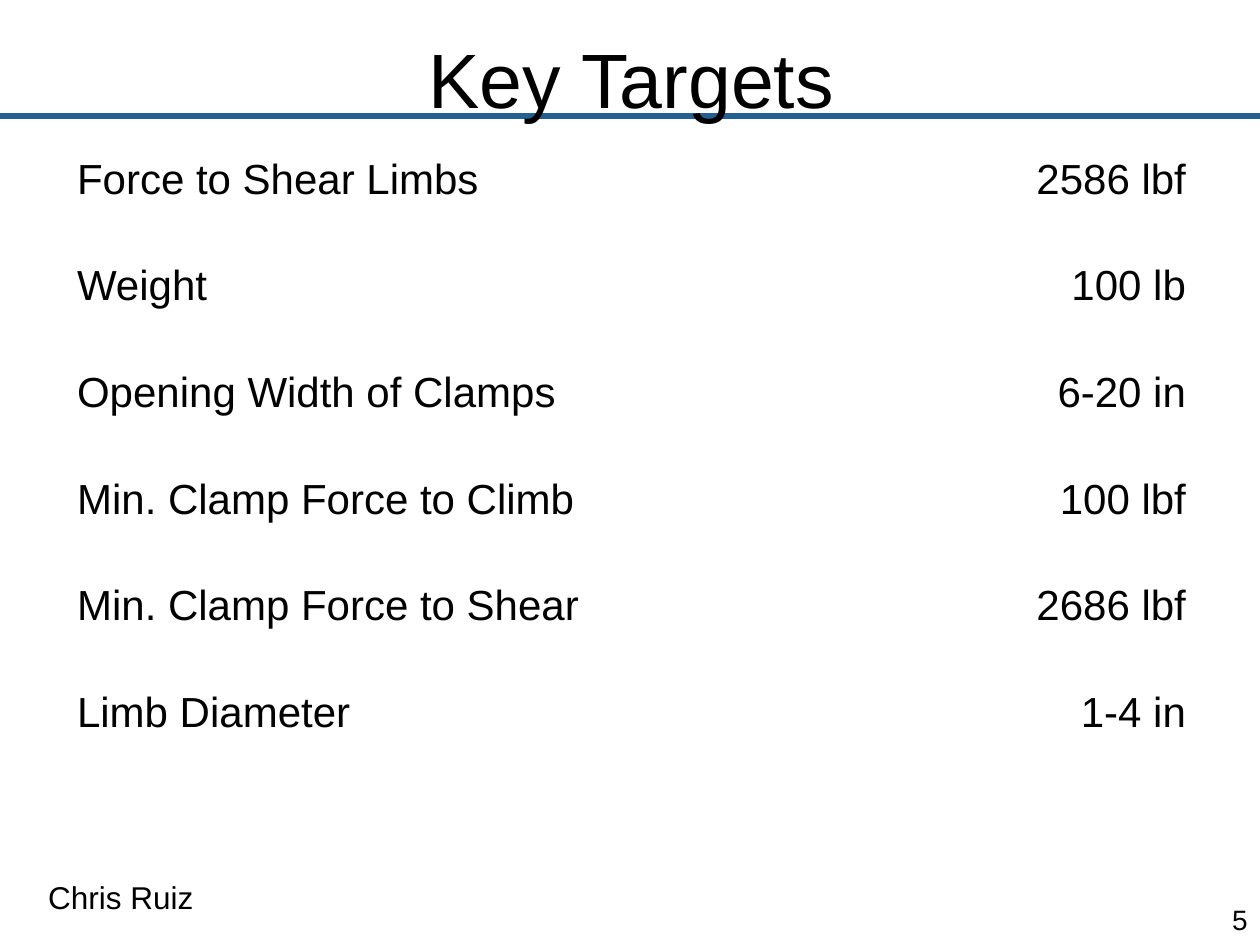
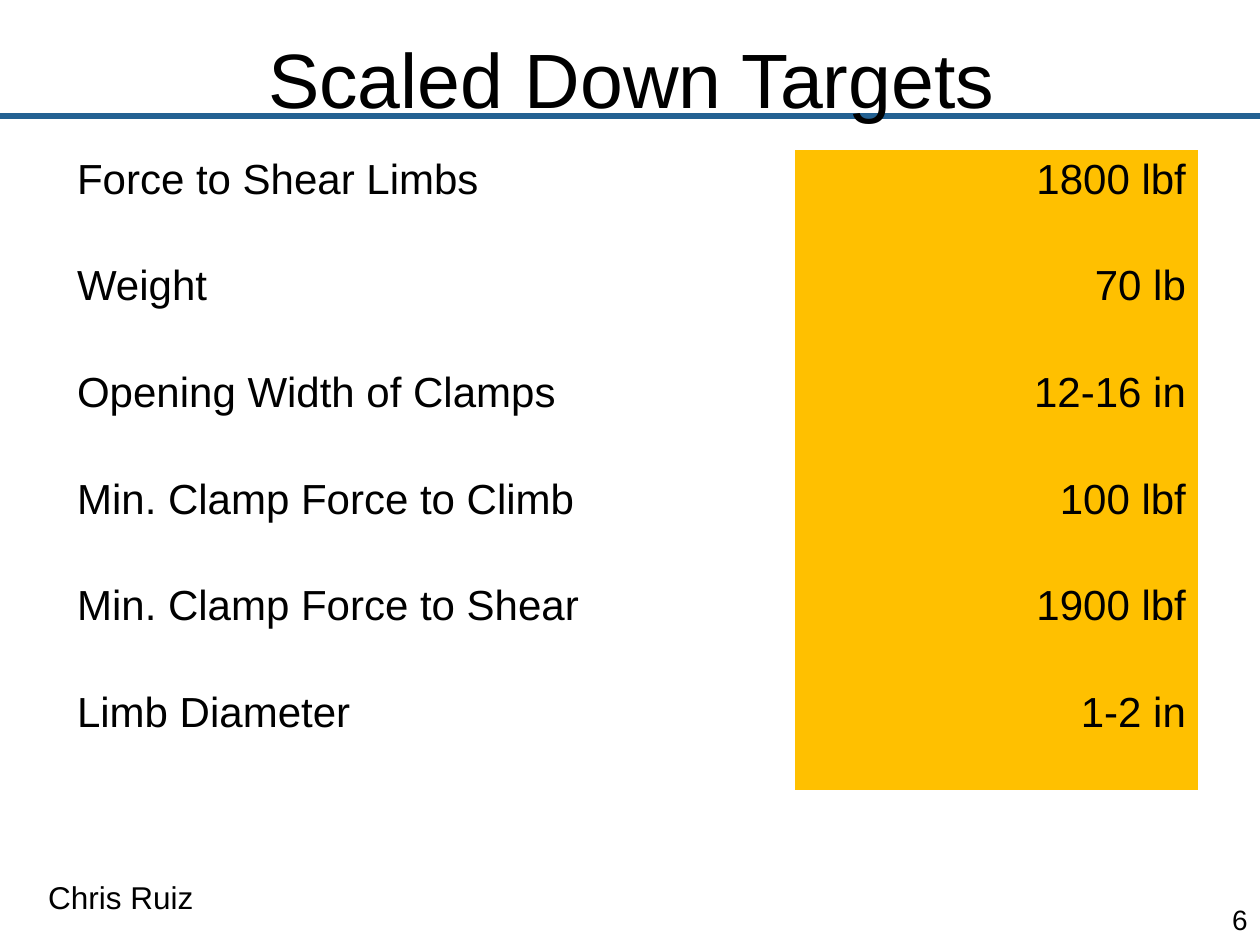
from lxml import etree
from pptx import Presentation
from pptx import util as u
from pptx.dml.color import RGBColor
from pptx.enum import shapes, text
from pptx.oxml.ns import qn

BLACK = RGBColor(0x00, 0x00, 0x00)
RULE_BLUE = RGBColor(0x23, 0x61, 0x92)
AMBER = RGBColor(0xFF, 0xC0, 0x00)
FONT = "Arial"
NO_GRID_STYLE = "{2D5ABB26-0587-4C30-8999-92F81FD0307C}"
FIRST_NUMBER = 5
ROW_HEIGHT = u.Cm(2.15)
LABEL_WIDTH = u.Cm(14.73)
VALUE_WIDTH = u.Cm(8.13)

LEFT = text.PP_ALIGN.LEFT
CENTER = text.PP_ALIGN.CENTER
RIGHT = text.PP_ALIGN.RIGHT

measures = [
    "Force to Shear Limbs",
    "Weight",
    "Opening Width of Clamps",
    "Min. Clamp Force to Climb",
    "Min. Clamp Force to Shear",
    "Limb Diameter",
]
target_sets = [
    ("Key Targets", None,
     ["2586 lbf", "100 lb", "6-20 in", "100 lbf", "2686 lbf", "1-4 in"]),
    ("Scaled Down Targets", AMBER,
     ["1800 lbf", "70 lb", "12-16 in", "100 lbf", "1900 lbf", "1-2 in"]),
]


def write(frame, words, size, align):
    paragraph = frame.paragraphs[0]
    paragraph.alignment = align
    run = paragraph.add_run()
    run.text = words
    run.font.name = FONT
    run.font.size = u.Pt(size)
    run.font.color.rgb = BLACK


def add_label(slide, left, top, width, words, size, align, anchor):
    frame = slide.shapes.add_textbox(left, top, width, u.Cm(1.02)).text_frame
    frame.word_wrap = True
    frame.vertical_anchor = anchor
    write(frame, words, size, align)


prs = Presentation()
prs.slide_width = u.Cm(25.4)
prs.slide_height = u.Cm(19.05)
title_only = prs.slide_layouts[5]

for number, (heading, value_fill, values) in enumerate(target_sets, FIRST_NUMBER):
    slide = prs.slides.add_slide(title_only)

    title = slide.shapes.title
    title.left, title.top = u.Cm(1.3), u.Cm(0.2)
    title.width, title.height = u.Cm(22.86), u.Cm(1.7)
    title_frame = title.text_frame
    title_frame.auto_size = text.MSO_AUTO_SIZE.NONE
    title_frame.vertical_anchor = text.MSO_ANCHOR.TOP
    title_frame.margin_top = u.Cm(0.43)
    write(title_frame, heading, 44, CENTER)

    rule = slide.shapes.add_connector(
        shapes.MSO_CONNECTOR.STRAIGHT, 0, u.Cm(2.33), prs.slide_width, u.Cm(2.33))
    rule.line.color.rgb = RULE_BLUE
    rule.line.width = u.Pt(3.5)
    etree.SubElement(rule._element.spPr, qn("a:effectLst"))
    title._element.addprevious(rule._element)

    targets = slide.shapes.add_table(
        len(measures), 2, u.Cm(1.3), u.Cm(3.02),
        LABEL_WIDTH + VALUE_WIDTH, ROW_HEIGHT * len(measures)).table
    targets.first_row = False
    targets.horz_banding = False
    targets._tbl.tblPr.find(qn("a:tableStyleId")).text = NO_GRID_STYLE
    targets.columns[0].width = LABEL_WIDTH
    targets.columns[1].width = VALUE_WIDTH

    for row, entry in enumerate(zip(measures, values)):
        targets.rows[row].height = ROW_HEIGHT
        for column, (words, align, fill) in enumerate(
                zip(entry, (LEFT, RIGHT), (None, value_fill))):
            cell = targets.cell(row, column)
            if fill is None:
                cell.fill.background()
            else:
                cell.fill.solid()
                cell.fill.fore_color.rgb = fill
            write(cell.text_frame, words, 24, align)

    add_label(slide, u.Cm(0.43), u.Cm(17.58), u.Cm(4.01), "Chris Ruiz", 18,
              CENTER, text.MSO_ANCHOR.TOP)
    add_label(slide, u.Cm(24.13), u.Cm(18.03), u.Cm(1.27), str(number), 16,
              RIGHT, text.MSO_ANCHOR.MIDDLE)

prs.save("out.pptx")
